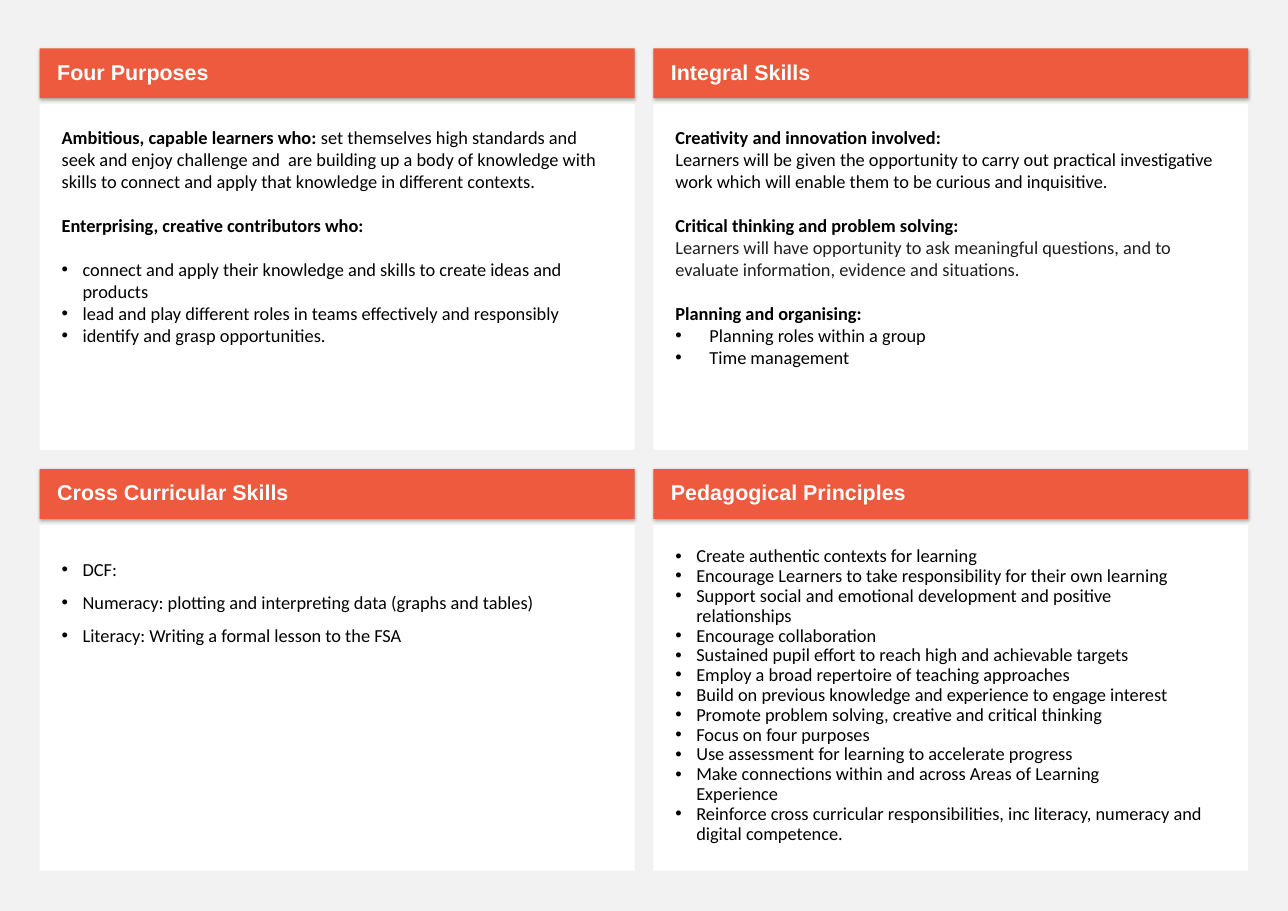
from dataclasses import dataclass

from lxml import etree
from pptx import Presentation
from pptx.dml.color import RGBColor
from pptx.enum.shapes import MSO_SHAPE as Shape
from pptx.enum.text import MSO_ANCHOR as Anchor, PP_ALIGN as Align
from pptx.oxml import parse_xml
from pptx.oxml.ns import nsdecls, qn
from pptx.util import Inches, Pt

ORANGE = RGBColor(0xED, 0x5A, 0x3E)
WHITE = RGBColor(0xFF, 0xFF, 0xFF)
PALE_GREY = RGBColor(0xF2, 0xF2, 0xF2)
BLACK = RGBColor(0, 0, 0)
CHARCOAL = RGBColor(0x1F, 0x1F, 0x1F)

COLUMNS = (0.36, 5.93)
ROWS = (0.44, 4.26)
CARD_WIDTH, HEADING_HEIGHT, BODY_HEIGHT = 5.4, 0.45, 3.14
BODY_OFFSET = 0.505

HEADING_FONT = {"name": "Arial", "size": Pt(14), "bold": True}
BODY_FONT = {"name": "Calibri", "size": Pt(12), "bold": False}
HEADING_FRAME = {
    "margin_left": Inches(0.16), "margin_right": Inches(0.1),
    "margin_top": Inches(0.05), "margin_bottom": Inches(0.05),
    "vertical_anchor": Anchor.MIDDLE, "word_wrap": True,
}
BODY_FRAME = {
    "margin_left": Inches(0.2), "margin_right": Inches(0.2),
    "margin_top": Inches(0.2), "margin_bottom": Inches(0.2),
    "vertical_anchor": Anchor.TOP, "word_wrap": True,
}
LINE_GAP = Pt(14.4)


@dataclass
class Entry:
    """One paragraph: a bold lead, then plain text; indent > 0 gives a bullet."""
    text: str = ""
    lead: str = ""
    indent: float = 0
    spacing: float = 1.0
    gap: bool = False
    color: RGBColor = BLACK


def bullets(lines, indent=0.19, spacing=1.0, gap=False):
    return [Entry(line, indent=indent, spacing=spacing, gap=gap and i == 0)
            for i, line in enumerate(lines)]


FOUR_PURPOSES = [
    Entry("set themselves high standards and seek and enjoy challenge and  are "
          "building up a body of knowledge with skills to connect and apply "
          "that knowledge in different contexts.",
          lead="Ambitious, capable learners who: "),
    Entry(lead="Enterprising, creative contributors who:", gap=True),
    *bullets([
        "connect and apply their knowledge and skills to create ideas and products",
        "lead and play different roles in teams effectively and responsibly",
        "identify and grasp opportunities.",
    ], gap=True),
]
INTEGRAL_SKILLS = [
    Entry(lead="Creativity and innovation involved:"),
    Entry("Learners will be given the opportunity to carry out practical "
          "investigative work which will enable them to be curious and inquisitive."),
    Entry(lead="Critical thinking and problem solving:", gap=True),
    Entry("Learners will have opportunity to ask meaningful questions, and to "
          "evaluate information, evidence and situations.", color=CHARCOAL),
    Entry(lead="Planning and organising:", gap=True),
    *bullets(["Planning roles within a group", "Time management"], indent=0.31),
]
CROSS_CURRICULAR = bullets([
    "DCF:",
    "Numeracy: plotting and interpreting data (graphs and tables)",
    "Literacy: Writing a formal lesson to the FSA",
], spacing=1.5)
PEDAGOGY = bullets([
    "Create authentic contexts for learning",
    "Encourage Learners to take responsibility for their own learning",
    "Support social and emotional development and positive\nrelationships",
    "Encourage collaboration",
    "Sustained pupil effort to reach high and achievable targets",
    "Employ a broad repertoire of teaching approaches",
    "Build on previous knowledge and experience to engage interest",
    "Promote problem solving, creative and critical thinking",
    "Focus on four purposes",
    "Use assessment for learning to accelerate progress",
    "Make connections within and across Areas of Learning\nExperience",
    "Reinforce cross curricular responsibilities, inc literacy, numeracy and "
    "digital competence.",
], spacing=0.9)

CARDS = [
    ("Four Purposes", FOUR_PURPOSES), ("Integral Skills", INTEGRAL_SKILLS),
    ("Cross Curricular Skills", CROSS_CURRICULAR), ("Pedagogical Principles", PEDAGOGY),
]


def apply_format(target, values):
    for attribute, value in values.items():
        setattr(target, attribute, value)


def add_panel(slide, left, top, height, fill, frame_format):
    panel = slide.shapes.add_shape(Shape.RECTANGLE, Inches(left), Inches(top),
                                   Inches(CARD_WIDTH), Inches(height))
    panel.shadow.inherit = False
    panel.fill.solid()
    panel.fill.fore_color.rgb = fill
    panel.line.fill.background()
    apply_format(panel.text_frame, frame_format)
    return panel


def add_soft_shadow(panel):
    effects = panel._element.spPr.find(qn("a:effectLst"))
    effects.append(parse_xml(
        f'<a:outerShdw {nsdecls("a")} blurRad="{Inches(0.03)}" '
        f'dist="{Inches(0.01)}" dir="5400000"><a:srgbClr val="000000">'
        '<a:alpha val="30000"/></a:srgbClr></a:outerShdw>'))


def add_run(paragraph, text, font_format, color):
    run = paragraph.add_run()
    run.text = text
    apply_format(run.font, font_format)
    run.font.color.rgb = color


def add_bullet(paragraph, indent):
    properties = paragraph._p.get_or_add_pPr()
    properties.set("marL", str(Inches(indent)))
    properties.set("indent", str(-Inches(indent)))
    etree.SubElement(properties, qn("a:buFont")).set("typeface", "Arial")
    etree.SubElement(properties, qn("a:buChar")).set("char", "•")


def write_entry(paragraph, entry):
    apply_format(paragraph, {
        "alignment": Align.LEFT, "line_spacing": entry.spacing,
        "space_before": LINE_GAP if entry.gap else Pt(0),
    })
    if entry.indent:
        add_bullet(paragraph, entry.indent)
    if entry.lead:
        add_run(paragraph, entry.lead, {**BODY_FONT, "bold": True}, entry.color)
    if entry.text:
        for i, line in enumerate(entry.text.split("\n")):
            if i:
                paragraph.add_line_break()
            add_run(paragraph, line, BODY_FONT, entry.color)


def add_card(slide, left, top, title, entries):
    body = add_panel(slide, left, top + BODY_OFFSET, BODY_HEIGHT, WHITE, BODY_FRAME)
    frame = body.text_frame
    for i, entry in enumerate(entries):
        write_entry(frame.add_paragraph() if i else frame.paragraphs[0], entry)

    heading = add_panel(slide, left, top, HEADING_HEIGHT, ORANGE, HEADING_FRAME)
    add_soft_shadow(heading)
    title_line = heading.text_frame.paragraphs[0]
    apply_format(title_line, {"alignment": Align.LEFT, "line_spacing": 0.9})
    add_run(title_line, title, HEADING_FONT, WHITE)


def main():
    deck = Presentation()
    deck.slide_width, deck.slide_height = Inches(11.69), Inches(8.27)
    slide = deck.slides.add_slide(deck.slide_layouts[6])
    slide.background.fill.solid()
    slide.background.fill.fore_color.rgb = PALE_GREY
    for i, (title, entries) in enumerate(CARDS):
        row, column = divmod(i, len(COLUMNS))
        add_card(slide, COLUMNS[column], ROWS[row], title, entries)
    deck.save("out.pptx")


if __name__ == "__main__":
    main()
